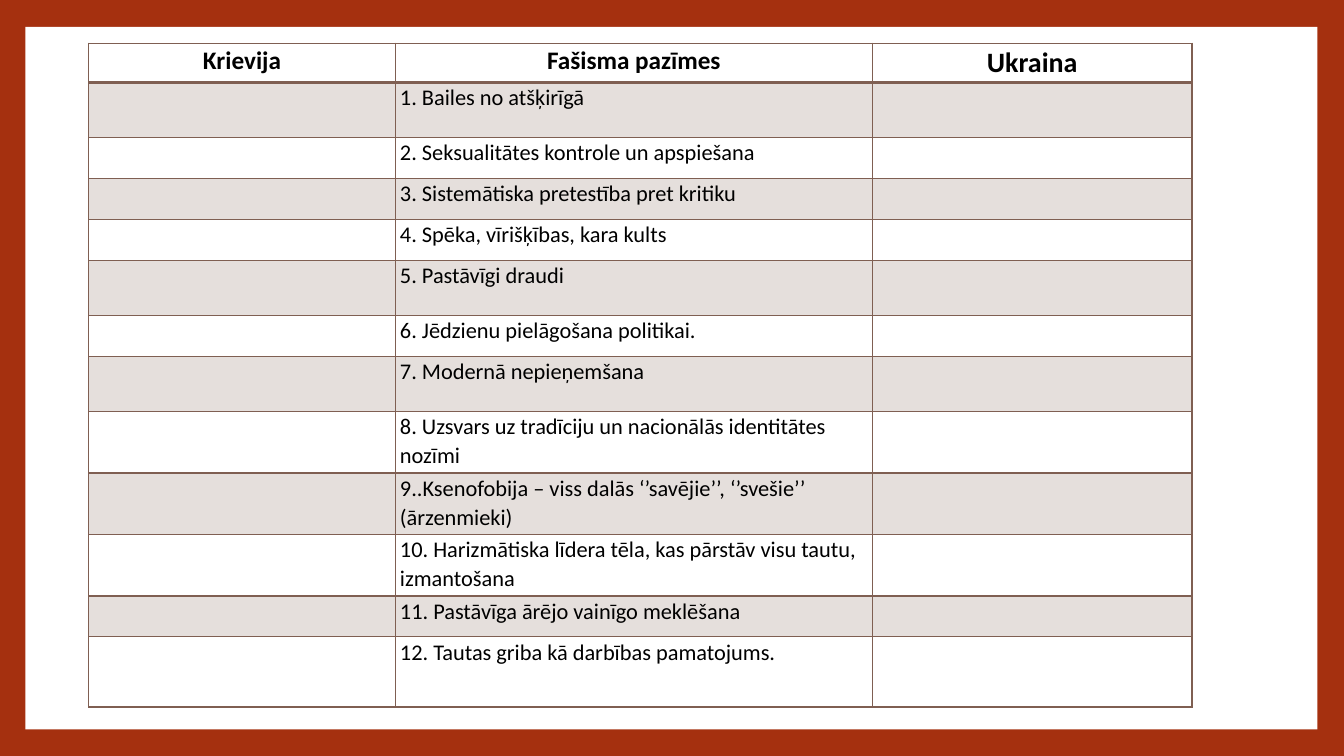
from lxml.etree import SubElement
from pptx import Presentation
from pptx.dml.color import RGBColor
from pptx.enum.shapes import MSO_SHAPE as Shape
from pptx.enum.text import PP_ALIGN as Align
from pptx.oxml.ns import qn
from pptx.util import Cm, Pt

RUST = RGBColor(0xA5, 0x30, 0x0F)
BROWN = RGBColor(0x7F, 0x5F, 0x52)
WHITE = RGBColor(0xFF, 0xFF, 0xFF)
BLACK = RGBColor(0, 0, 0)

HEADINGS = [("Krievija", 18), ("Fašisma pazīmes", 18), ("Ukraina", 20)]
HEADER_HEIGHT = 0.99
SIGNS = [
    ("1. Bailes no atšķirīgā", 1.39),
    ("2. Seksualitātes kontrole un apspiešana", 1.03),
    ("3. Sistemātiska pretestība pret kritiku", 1.03),
    ("4. Spēka, vīrišķības, kara kults", 1.03),
    ("5. Pastāvīgi draudi", 1.39),
    ("6. Jēdzienu pielāgošana politikai.", 1.03),
    ("7. Modernā nepieņemšana", 1.39),
    ("8. Uzsvars uz tradīciju un nacionālās identitātes nozīmi", 1.55),
    ("9..Ksenofobija – viss dalās ‘’savējie’’, ‘’svešie’’ (ārzenmieki)", 1.55),
    ("10. Harizmātiska līdera tēla, kas pārstāv visu tautu, izmantošana", 1.55),
    ("11. Pastāvīga ārējo vainīgo meklēšana", 1.03),
    ("12. Tautas griba kā darbības pamatojums.", 1.77),
]
COLUMN_WIDTHS = [7.72, 12.03, 8.05]


def write_text(cell, text, size=16, bold=False, align=Align.LEFT):
    cell.margin_left = cell.margin_right = Cm(0.12)
    cell.margin_top = cell.margin_bottom = 0
    paragraph = cell.text_frame.paragraphs[0]
    paragraph.alignment = align
    paragraph.line_spacing = 1.07
    paragraph.space_after = Pt(8)
    run = paragraph.add_run()
    run.text = text
    run.font.name = "Calibri"
    run.font.size = Pt(size)
    run.font.bold = bold
    run.font.color.rgb = BLACK


def draw_borders(cell, top=1, bottom=1):
    """Outline the cell in brown; widths are in points."""
    properties = cell._tc.get_or_add_tcPr()
    for side, width in (("L", 1), ("R", 1), ("T", top), ("B", bottom)):
        line = SubElement(properties, qn(f"a:ln{side}"), w=str(Pt(width)))
        solid = SubElement(line, qn("a:solidFill"))
        SubElement(solid, qn("a:srgbClr"), val=str(BROWN))


prs = Presentation()
prs.slide_width, prs.slide_height = Cm(33.87), Cm(19.05)
slide = prs.slides.add_slide(prs.slide_layouts[6])
slide.background.fill.solid()
slide.background.fill.fore_color.rgb = RUST

panel = slide.shapes.add_shape(Shape.RECTANGLE, Cm(0.64), Cm(0.68), Cm(32.56), Cm(17.7))
panel.shadow.inherit = False
panel.fill.solid()
panel.fill.fore_color.rgb = WHITE
panel.line.fill.background()

row_heights = [HEADER_HEIGHT] + [height for _, height in SIGNS]
comparison = slide.shapes.add_table(
    len(row_heights), len(COLUMN_WIDTHS), Cm(2.24), Cm(1.09),
    Cm(sum(COLUMN_WIDTHS)), Cm(sum(row_heights))).table
comparison.first_row = comparison.horz_banding = False
for column, width in zip(comparison.columns, COLUMN_WIDTHS):
    column.width = Cm(width)

for index, (row, height) in enumerate(zip(comparison.rows, row_heights)):
    row.height = Cm(height)
    for cell in row.cells:
        draw_borders(cell, top=2 if index == 1 else 1, bottom=2 if index == 0 else 1)
        if index % 2:
            cell.fill.solid()
            cell.fill.fore_color.rgb = BROWN
            tint = cell._tc.tcPr.find(qn("a:solidFill")).find(qn("a:srgbClr"))
            SubElement(tint, qn("a:alpha"), val="20000")
        else:
            cell.fill.background()

for column, (heading, size) in enumerate(HEADINGS):
    write_text(comparison.cell(0, column), heading, size=size, bold=True, align=Align.CENTER)
for index, (sign, _) in enumerate(SIGNS, start=1):
    write_text(comparison.cell(index, 1), sign)

prs.save("out.pptx")
